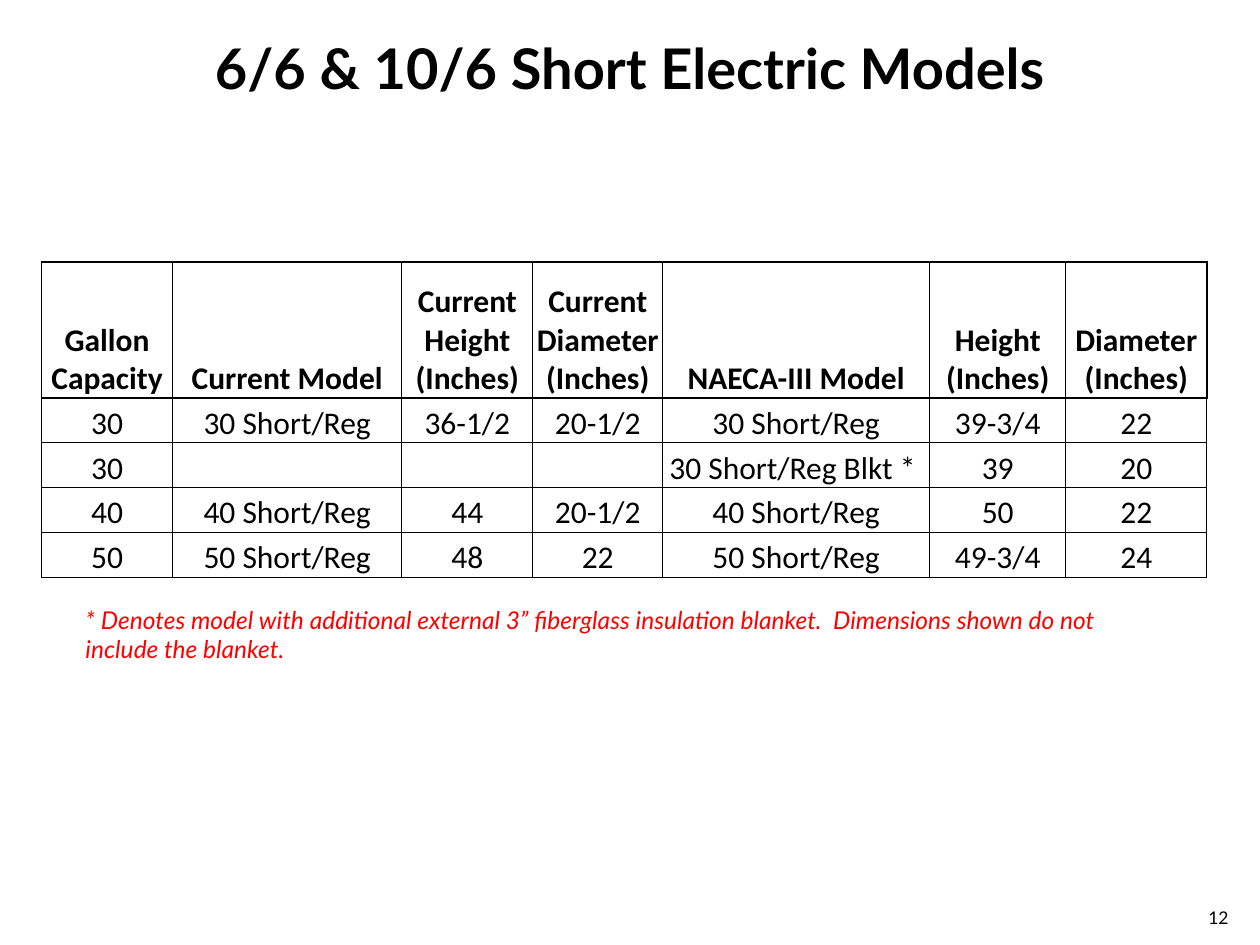
from lxml.etree import SubElement
from pptx import Presentation
from pptx.dml.color import RGBColor
from pptx.enum.text import MSO_ANCHOR, PP_ALIGN
from pptx.oxml.ns import qn
from pptx.util import Inches, Pt

THEME = {
    "ink": "000000",
    "title": {"name": "Lato", "size": Pt(32), "bold": True},
    "head": {"name": "Calibri", "size": Pt(18), "bold": True},
    "body": {"name": "Calibri", "size": Pt(18), "bold": False},
    "note": {"name": "Lato", "size": Pt(14), "italic": True},
    "page": {"name": "Lato", "size": Pt(10)},
    "note_color": "FF0000",
    "thin": Pt(0.5),
    "thick": Pt(1),
}

prs = Presentation()
prs.slide_width, prs.slide_height = Inches(10), Inches(7.5)
s = prs.slides.add_slide(prs.slide_layouts[6])


def write(tf, text, style, color, align):
    p = tf.paragraphs[0]
    p.alignment = align
    r = p.add_run()
    r.text = text
    for key, value in THEME[style].items():
        setattr(r.font, key, value)
    r.font.color.rgb = RGBColor.from_string(color)


def draw_border(cell, side, width):
    ln = SubElement(cell._tc.get_or_add_tcPr(), qn(f"a:ln{side}"), w=str(width))
    fill = SubElement(ln, qn("a:solidFill"))
    SubElement(fill, qn("a:srgbClr"), val=THEME["ink"])


# Title, footnote and page number
labels = [
    ((0.5, 0.22, 9, 0.62), "6/6 & 10/6 Short Electric Models",
     "title", THEME["ink"], PP_ALIGN.CENTER, MSO_ANCHOR.MIDDLE),
    ((0.58, 4.75, 8.83, 0.57),
     "* Denotes model with additional external 3” fiberglass insulation blanket.  "
     "Dimensions shown do not include the blanket.",
     "note", THEME["note_color"], PP_ALIGN.LEFT, MSO_ANCHOR.TOP),
    ((9.42, 7.15, 0.5, 0.27), "12",
     "page", THEME["ink"], PP_ALIGN.CENTER, MSO_ANCHOR.TOP),
]
for box, text, style, color, align, anchor in labels:
    tf = s.shapes.add_textbox(*map(Inches, box)).text_frame
    tf.word_wrap = True
    tf.vertical_anchor = anchor
    write(tf, text, style, color, align)

# Model table
rows = [
    ["Gallon Capacity", "Current Model", "Current Height (Inches)",
     "Current Diameter (Inches)", "NAECA-III Model", "Height (Inches)",
     "Diameter (Inches)"],
    ["30", "30 Short/Reg", "36-1/2", "20-1/2", "30 Short/Reg", "39-3/4", "22"],
    ["30", "", "", "", "30 Short/Reg Blkt * ", "39", "20"],
    ["40", "40 Short/Reg", "44", "20-1/2", "40 Short/Reg", "50", "22"],
    ["50", "50 Short/Reg", "48", "22", "50 Short/Reg", "49-3/4", "24"],
]
col_widths = [1.04, 1.82, 1.04, 1.03, 2.12, 1.08, 1.12]
row_heights = [1.08] + [0.355] * 4
last = len(col_widths) - 1
cell_format = {
    "margin_left": Inches(0.01), "margin_right": Inches(0.01),
    "margin_top": Inches(0.01), "margin_bottom": 0,
    "vertical_anchor": MSO_ANCHOR.BOTTOM,
}

table = s.shapes.add_table(
    len(rows), len(col_widths), Inches(0.33), Inches(2.08),
    Inches(sum(col_widths)), Inches(sum(row_heights))).table
table.first_row = table.horz_banding = False
for column, width in zip(table.columns, col_widths):
    column.width = Inches(width)
for row, height in zip(table.rows, row_heights):
    row.height = Inches(height)

for i, values in enumerate(rows):
    for j, value in enumerate(values):
        cell = table.cell(i, j)
        for key, setting in cell_format.items():
            setattr(cell, key, setting)
        write(cell.text_frame, value, "head" if i == 0 else "body",
              THEME["ink"], PP_ALIGN.CENTER)
        # The header row has a heavier frame
        heavy = {"L": i == 0 and j == 0, "R": i == 0 and j == last,
                 "T": i <= 1, "B": i == 0}
        for side, is_heavy in heavy.items():
            draw_border(cell, side, THEME["thick" if is_heavy else "thin"])
        cell.fill.background()

prs.save("out.pptx")
